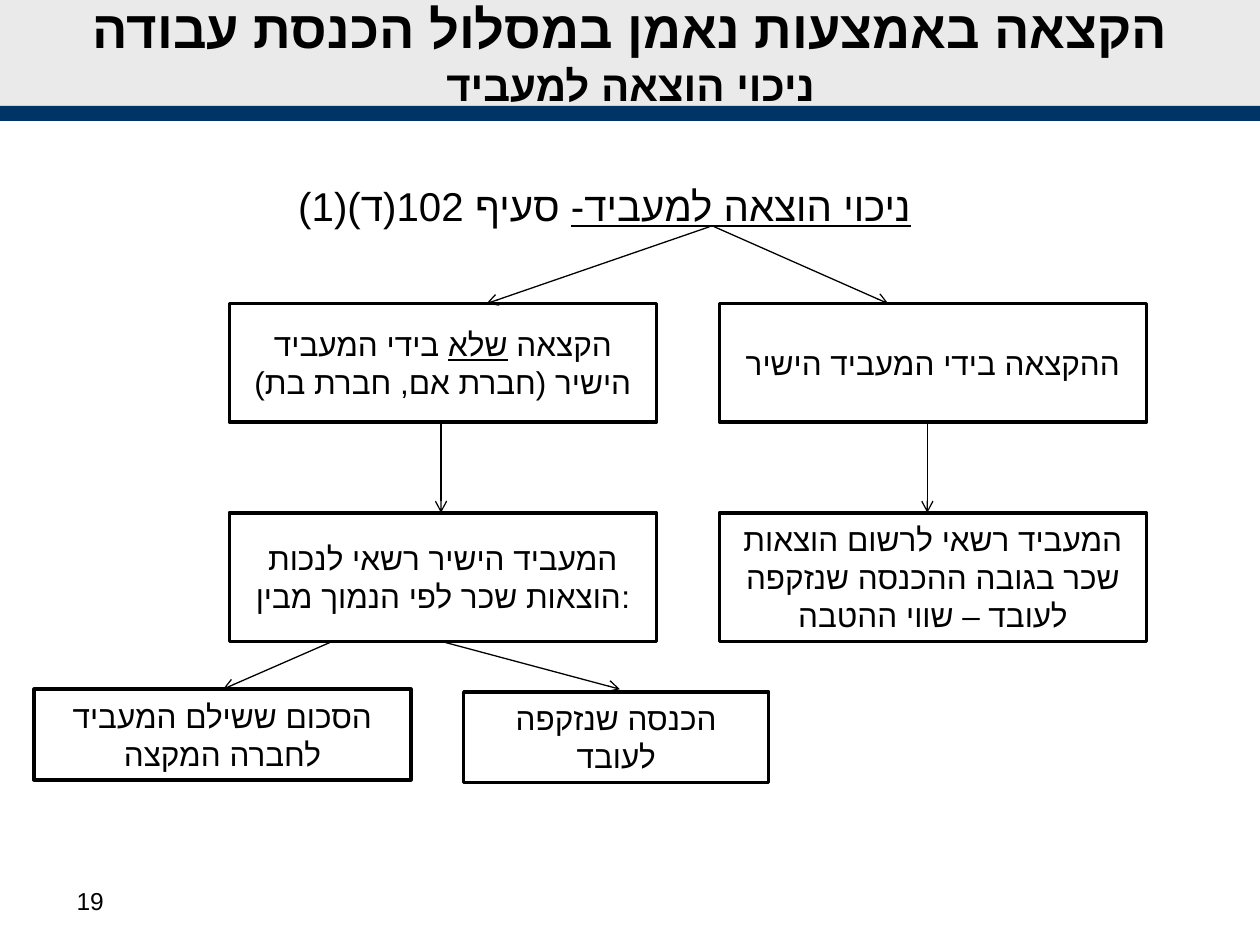
from typing import NamedTuple

from lxml import etree
from pptx import Presentation
from pptx import util as u
from pptx.dml.color import RGBColor
from pptx.enum import shapes, text
from pptx.oxml import ns

COLUMNS, ROWS = 100, 75
BLACK, WHITE, GREY, NAVY = "000000", "FFFFFF", "EAEAEA", "003366"
FONT = "Arial"


class Area(NamedTuple):
    column: float
    row: float
    columns: float
    rows: float


class Span(NamedTuple):
    words: str
    underline: bool = False


class Node(NamedTuple):
    area: Area
    spans: list[Span]


class Arrow(NamedTuple):
    start: tuple[float, float]
    end: tuple[float, float]


deck = Presentation()
deck.slide_width, deck.slide_height = u.Inches(10), u.Inches(7.5)
slide = deck.slides.add_slide(deck.slide_layouts[6])


def across(columns: float) -> int:
    return round(deck.slide_width * columns / COLUMNS)


def down(rows: float) -> int:
    return round(deck.slide_height * rows / ROWS)


def place(area: Area) -> tuple[int, int, int, int]:
    return across(area.column), down(area.row), across(area.columns), down(area.rows)


def color(value: str) -> RGBColor:
    return RGBColor.from_string(value)


def write(frame, paragraph: int, spans: list[Span], *, size: float,
          bold: bool = False, rtl: bool = False, align=text.PP_ALIGN.CENTER) -> None:
    """Fill the numbered paragraph, adding it when it is not the first."""
    frame.word_wrap = True
    para = frame.add_paragraph() if paragraph else frame.paragraphs[0]
    para.alignment = align
    if rtl:
        para._p.get_or_add_pPr().set("rtl", "1")
    for words, underline in spans:
        span = para.add_run()
        span.text = words
        span.font.name, span.font.size = FONT, u.Pt(size)
        span.font.bold, span.font.underline = bold, underline
        span.font.color.rgb = color(BLACK)
        etree.SubElement(span.font._element, ns.qn("a:cs"), typeface=FONT)


def add_text_frame(area: Area, anchor=text.MSO_ANCHOR.TOP):
    frame = slide.shapes.add_textbox(*place(area)).text_frame
    frame.vertical_anchor = anchor
    return frame


def add_box(area: Area, fill: str, outline: str | None = None):
    box = slide.shapes.add_shape(shapes.MSO_SHAPE.RECTANGLE, *place(area))
    box.shadow.inherit = False
    box.fill.solid()
    box.fill.fore_color.rgb = color(fill)
    if outline:
        box.line.color.rgb = color(outline)
        box.line.width = u.Pt(2)
    else:
        box.line.fill.background()
    return box


def add_node(node: Node) -> None:
    frame = add_box(node.area, WHITE, BLACK).text_frame
    frame.vertical_anchor = text.MSO_ANCHOR.MIDDLE
    write(frame, 0, node.spans, size=18)


def add_arrow(arrow: Arrow) -> None:
    (x1, y1), (x2, y2) = arrow
    line = slide.shapes.add_connector(
        shapes.MSO_CONNECTOR.STRAIGHT, across(x1), down(y1), across(x2), down(y2))
    line.line.color.rgb = color(BLACK)
    line.line.width = u.Pt(0.75)
    etree.SubElement(line.line._get_or_add_ln(), ns.qn("a:tailEnd"), type="arrow")
    etree.SubElement(line._element.spPr, ns.qn("a:effectLst"))


LEFT, RIGHT, WIDTH = 18.2, 57.1, 33.9
CASE_TOP, CASE_HEIGHT = 24.1, 9.4
RULE_TOP, RULE_HEIGHT = 40.7, 10.2
CASE_BOTTOM, RULE_BOTTOM = CASE_TOP + CASE_HEIGHT, RULE_TOP + RULE_HEIGHT
LIMIT_TOP, LIMIT_HEIGHT = 54.7, 7.2
HEADING_BOTTOM = 18

NODES = [
    Node(Area(RIGHT, CASE_TOP, WIDTH, CASE_HEIGHT), [Span("ההקצאה בידי המעביד הישיר")]),
    Node(Area(LEFT, CASE_TOP, WIDTH, CASE_HEIGHT),
         [Span("הקצאה "), Span("שלא", True), Span(" בידי המעביד הישיר (חברת אם, חברת בת)")]),
    Node(Area(LEFT, RULE_TOP, WIDTH, RULE_HEIGHT),
         [Span("המעביד הישיר רשאי לנכות הוצאות שכר לפי הנמוך מבין:")]),
    Node(Area(RIGHT, RULE_TOP, WIDTH, RULE_HEIGHT),
         [Span("המעביד רשאי לרשום הוצאות שכר בגובה ההכנסה שנזקפה לעובד – שווי ההטבה")]),
    Node(Area(2.7, LIMIT_TOP, 29.9, LIMIT_HEIGHT), [Span("הסכום ששילם המעביד לחברה המקצה")]),
    Node(Area(36.8, LIMIT_TOP + 0.2, 24.2, LIMIT_HEIGHT), [Span("הכנסה שנזקפה לעובד")]),
]
ARROWS = [
    Arrow((56.3, HEADING_BOTTOM), (38.6, CASE_TOP)),
    Arrow((56.7, HEADING_BOTTOM), (70.5, CASE_TOP)),
    Arrow((73.6, CASE_BOTTOM), (73.6, RULE_TOP)),
    Arrow((35, CASE_BOTTOM), (35, RULE_TOP)),
    Arrow((26.4, RULE_BOTTOM), (17.7, LIMIT_TOP)),
    Arrow((35, RULE_BOTTOM), (49.2, LIMIT_TOP)),
]

add_box(Area(0, 0, COLUMNS, 8.5), GREY)
add_box(Area(0, 8.4, COLUMNS, 1.2), NAVY)

title = add_text_frame(Area(2, 0, 96.1, 8.4), text.MSO_ANCHOR.MIDDLE)
write(title, 0, [Span("הקצאה באמצעות נאמן במסלול הכנסת עבודה")], size=30, bold=True, rtl=True)
write(title, 1, [Span("ניכוי הוצאה למעביד")], size=24, bold=True, rtl=True)

heading = add_text_frame(Area(3, 13.9, 90, 53.1))
write(heading, 0, [Span("ניכוי הוצאה למעביד-", True), Span(" סעיף 102(ד)(1)")], size=23, rtl=True)

for node in NODES:
    add_node(node)
for arrow in ARROWS:
    add_arrow(arrow)

page_number = add_text_frame(Area(5.1, 69.8, 23.3, 5.2))
write(page_number, 0, [Span("19")], size=14, align=text.PP_ALIGN.LEFT)

deck.save("out.pptx")
